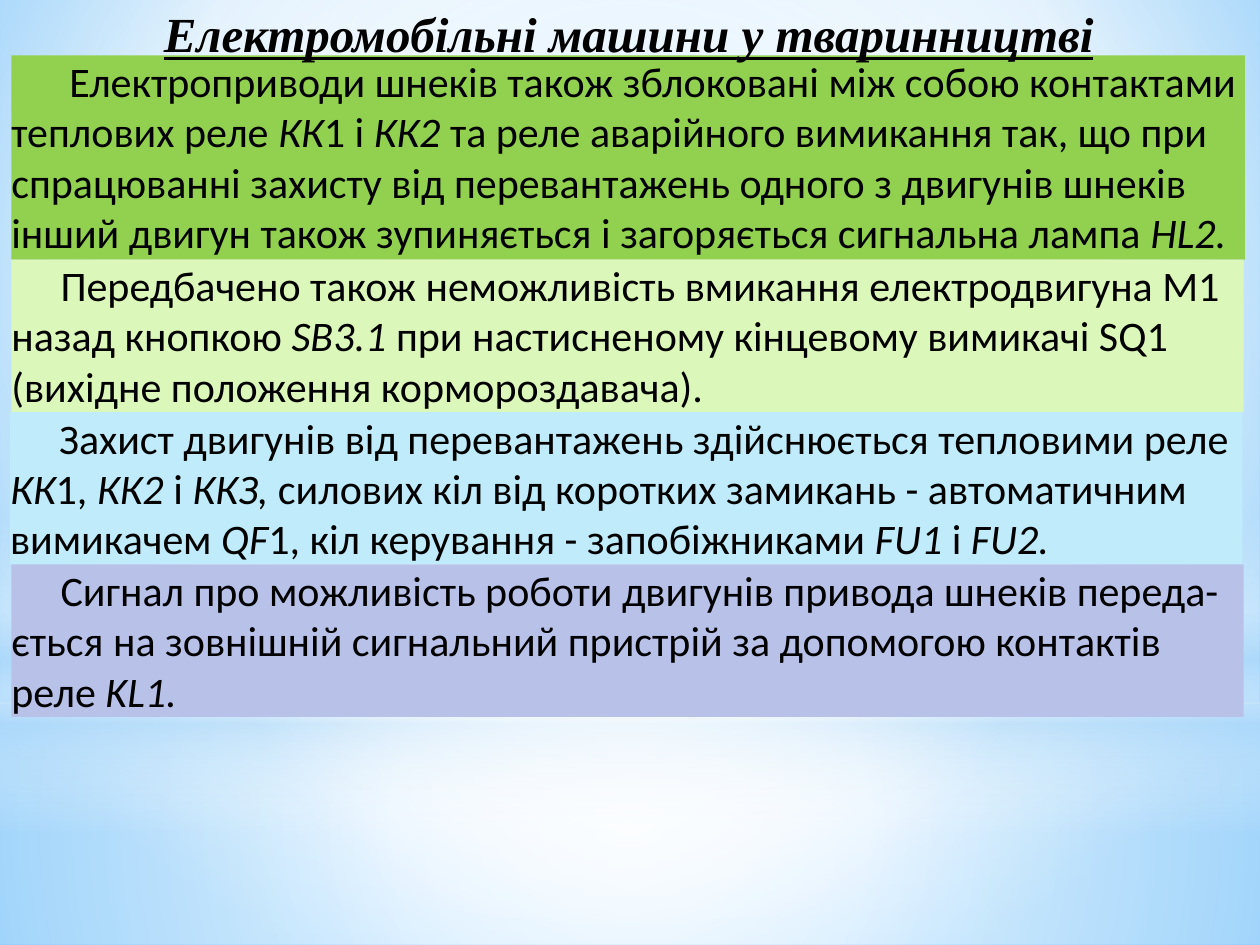
"""Build the slide on interlocks and protection of electric feeding machines."""
from pptx import Presentation
from pptx.dml.color import RGBColor
from pptx.enum.shapes import MSO_SHAPE
from pptx.enum.text import MSO_ANCHOR, MSO_AUTO_SIZE, PP_ALIGN
from pptx.oxml import parse_xml
from pptx.oxml.ns import nsdecls, qn
from pptx.util import Inches, Pt

RECT, OVAL = MSO_SHAPE.RECTANGLE, MSO_SHAPE.OVAL
TOP, LEFT = MSO_ANCHOR.TOP, PP_ALIGN.LEFT
NO_FIT, GROW = MSO_AUTO_SIZE.NONE, MSO_AUTO_SIZE.SHAPE_TO_FIT_TEXT
TITLE_ONLY = 5

THEME = {
    "ink": "000000",
    "title_font": "Times New Roman",
    "title_size": 28,
    "body_font": "Calibri",
    "body_size": 24,
    "white": "FFFFFF",
    "sky": "B4DCFA",
    "panels": ["92D050", "DCF7BA", "BFEBFA", "B8C2E9"],
}
WHITE, SKY = THEME["white"], THEME["sky"]
CENTRE = (50, 50, 50, 50)

BACKGROUND = ([(0, "9ED5FF", 100), (60, WHITE, 100), (100, "5BB9FF", 100)], (20, 10, 20, 60))
GLOWS = [
    (RECT, 5.58, 1.92, [(0, WHITE, 91), (37, WHITE, 76), (100, SKY, 79)], CENTRE),
    (RECT, 0, 5.58, [(0, WHITE, 89), (48, WHITE, 62), (100, SKY, 79)], CENTRE),
    (RECT, 4.12, 2.5, [(0, WHITE, 0), (29, WHITE, 30), (45, SKY, 40),
                       (55, WHITE, 26), (65, SKY, 60), (100, WHITE, 0)], None),
    (OVAL, 1.75, 5.58, [(0, WHITE, 100), (56, WHITE, 0)], CENTRE),
]

TITLE = "Електромобільні машини у тваринництві"
PANELS = [
    (0.09, 9.79, 1.62, 0.46,
     "Електроприводи шнеків також зблоковані між собою контактами теплових реле "
     "*КК*1 і *КК2* та реле аварійного вимикання так, що при спрацюванні захисту "
     "від перевантажень одного з двигунів шнеків інший двигун також зупиняється "
     "і загоряється сигнальна лампа *HL2.*"),
    (0.09, 9.78, 1.21, 0.39,
     "Передбачено також неможливість вмикання електродвигуна М1 назад кнопкою "
     "*SB3.1* при настисненому кінцевому вимикачі SQ1 "
     "(вихідне положення кормороздавача)."),
    (0.08, 9.78, 1.21, 0.39,
     "Захист двигунів від перевантажень здійснюється тепловими реле *КК*1, *КК2* "
     "і *ККЗ,* силових кіл від коротких замикань - автоматичним вимикачем *QF*1, "
     "кіл керування - запобіжниками *FU1* і *FU2.*"),
    (0.09, 9.78, 1.21, 0.39,
     "Сигнал про можливість роботи двигунів привода шнеків переда-ється на "
     "зовнішній сигнальний пристрій за допомогою контактів реле *KL1.*"),
]
PANELS_TOP = 0.44


def set_gradient(fill, owner, stops, focus):
    """Fill with a circular gradient, or a vertical one when focus is None."""
    fill.solid()
    solid = next(owner.iter(qn("a:solidFill")))
    marks = "".join(
        f'<a:gs pos="{place * 1000}"><a:srgbClr val="{colour}">'
        f'<a:alpha val="{opacity * 1000}"/></a:srgbClr></a:gs>'
        for place, colour, opacity in stops)
    direction = '<a:lin ang="5400000" scaled="0"/>'
    if focus:
        sides = " ".join(f'{side}="{value * 1000}"' for side, value in zip("ltrb", focus))
        direction = f'<a:path path="circle"><a:fillToRect {sides}/></a:path>'
    gradient = parse_xml(
        f'<a:gradFill {nsdecls("a")} rotWithShape="1"><a:gsLst>{marks}</a:gsLst>'
        f'{direction}</a:gradFill>')
    solid.getparent().replace(solid, gradient)


def add_plain_shape(page, kind, left, top, width, height):
    """Add a shape without line or shadow."""
    shape = page.shapes.add_shape(kind, *map(Inches, (left, top, width, height)))
    shape.shadow.inherit = False
    shape.line.fill.background()
    return shape


def set_frame(frame, wrap, fit):
    """Remove the insets, anchor the text at the top and return its paragraph."""
    frame.margin_left = frame.margin_right = frame.margin_top = frame.margin_bottom = 0
    frame.vertical_anchor = TOP
    frame.word_wrap = wrap
    frame.auto_size = fit
    para = frame.paragraphs[0]
    para.alignment = LEFT
    return para


def set_font(font, role):
    """Apply the theme's typeface, size and ink for a role."""
    font.name = THEME[f"{role}_font"]
    font.size = Pt(THEME[f"{role}_size"])
    font.color.rgb = RGBColor.from_string(THEME["ink"])


def add_panel(page, top, colour, panel):
    """Add one coloured panel, with starred words in italics."""
    left, width, height, indent, text = panel
    box = add_plain_shape(page, RECT, left, top, width, height)
    box.fill.solid()
    box.fill.fore_color.rgb = RGBColor.from_string(colour)
    para = set_frame(box.text_frame, True, GROW)
    set_font(para.font, "body")
    para._p.get_or_add_pPr().set("indent", str(Inches(indent)))
    for index, words in enumerate(text.split("*")):
        if words:
            span = para.add_run()
            span.text = words
            span.font.italic = index % 2 == 1


def add_title(page):
    """Place the title in front of the panels."""
    title = page.shapes.title
    title.left, title.top, title.width, title.height = map(Inches, (1.3, 0.03, 7.46, 0.47))
    title.text_frame.text = TITLE
    para = set_frame(title.text_frame, False, NO_FIT)
    set_font(para.font, "title")
    para.font.bold = para.font.italic = para.font.underline = True
    page.shapes._spTree.append(title._element)


def main():
    """Assemble and save the deck."""
    deck = Presentation()
    deck.slide_width, deck.slide_height = Inches(10), Inches(7.5)
    page = deck.slides.add_slide(deck.slide_layouts[TITLE_ONLY])
    set_gradient(page.background.fill, page._element, *BACKGROUND)
    for kind, top, height, stops, focus in GLOWS:
        glow = add_plain_shape(page, kind, 0, top, 10, height)
        set_gradient(glow.fill, glow._element.spPr, stops, focus)
    top = PANELS_TOP
    for panel, colour in zip(PANELS, THEME["panels"]):
        add_panel(page, top, colour, panel)
        top += panel[2]
    add_title(page)
    deck.save("out.pptx")


if __name__ == "__main__":
    main()
